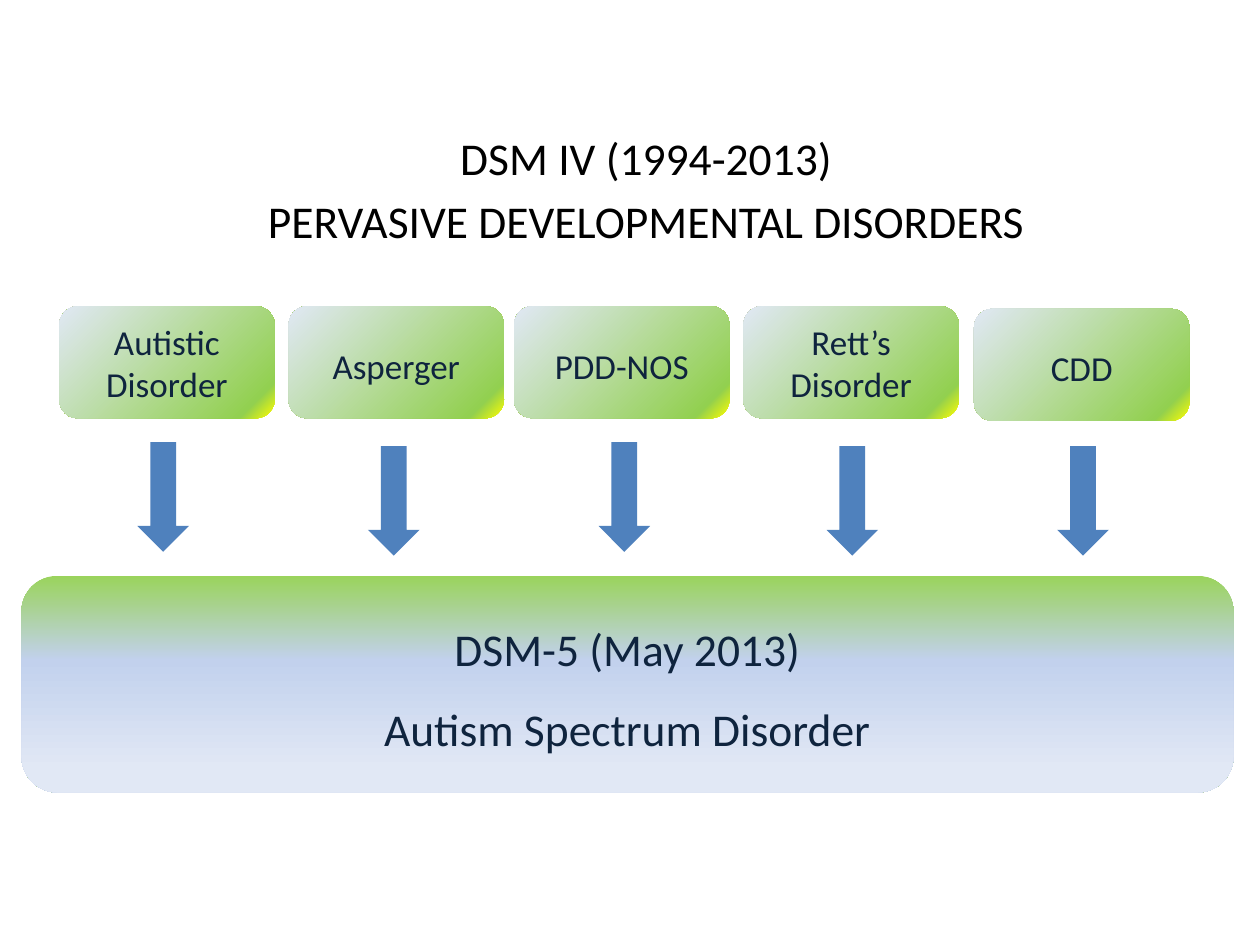
from lxml import etree
from pptx import Presentation
from pptx.dml.color import RGBColor
from pptx.enum.shapes import MSO_SHAPE
from pptx.enum.text import MSO_ANCHOR, MSO_AUTO_SIZE, PP_ALIGN
from pptx.oxml.ns import qn
from pptx.util import Inches, Pt

ROUNDED = MSO_SHAPE.ROUNDED_RECTANGLE
DOWN_ARROW = MSO_SHAPE.DOWN_ARROW
CENTER = PP_ALIGN.CENTER
MIDDLE, TOP = MSO_ANCHOR.MIDDLE, MSO_ANCHOR.TOP
NO_AUTOFIT = MSO_AUTO_SIZE.NONE

WHITE = RGBColor(0xFF, 0xFF, 0xFF)
BLACK = RGBColor(0x00, 0x00, 0x00)
NAVY = RGBColor(0x0F, 0x24, 0x3E)
BLUE = RGBColor(0x4F, 0x81, 0xBD)
YELLOW = RGBColor(0xFF, 0xFF, 0x00)
GREEN = RGBColor(0x92, 0xD0, 0x50)
LIGHT_GREEN = RGBColor(0x9A, 0xD3, 0x5C)
SOFT_BLUE = RGBColor(0xC2, 0xD1, 0xED)
PALE_BLUE = RGBColor(0xE1, 0xE8, 0xF5)

DISORDER_GRADIENT = [(0, YELLOW), (11, GREEN), (100, PALE_BLUE)], 225
SPECTRUM_GRADIENT = [(0, LIGHT_GREEN), (39, SOFT_BLUE), (89, PALE_BLUE)], 90

DISORDERS = [
    ("Autistic Disorder", 0.47, 2.43, 1.0, 1.09, 3.51),
    ("Asperger", 2.29, 2.43, 1.15, 2.92, 3.54),
    ("PDD-NOS", 4.08, 2.43, 1.15, 4.75, 3.51),
    ("Rett’s Disorder", 5.9, 2.43, 1.0, 6.56, 3.54),
    ("CDD", 7.73, 2.45, 1.15, 8.39, 3.54),
]


class DiagramSlide:
    """Holds the text style and the current slide, and adds its elements."""

    font_name = "Calibri"

    def __init__(self, slide):
        self.slide = slide

    def label(self, shape, lines, size, color, spacing, after, anchor):
        frame = shape.text_frame
        frame_format = {"word_wrap": True, "auto_size": NO_AUTOFIT, "vertical_anchor": anchor}
        for name, value in frame_format.items():
            setattr(frame, name, value)
        frame.text = "\n".join(lines)
        paragraph_format = {
            "alignment": CENTER,
            "line_spacing": spacing,
            "space_before": Pt(0),
            "space_after": Pt(after),
        }
        for paragraph in frame.paragraphs:
            for name, value in paragraph_format.items():
                setattr(paragraph, name, value)
            for run in paragraph.runs:
                for name, value in {"name": self.font_name, "size": Pt(size)}.items():
                    setattr(run.font, name, value)
                run.font.color.rgb = color

    def title(self, lines, left, top, width, height):
        heading = self.slide.shapes.title
        bounds = {"left": left, "top": top, "width": width, "height": height}
        for name, value in bounds.items():
            setattr(heading, name, Inches(value))
        heading.fill.solid()
        heading.fill.fore_color.rgb = WHITE
        self.label(heading, lines, 26, BLACK, 1.15, 0, TOP)

    def shape(self, kind, left, top, width, height):
        shape = self.slide.shapes.add_shape(
            kind, Inches(left), Inches(top), Inches(width), Inches(height)
        )
        shape.shadow.inherit = False
        shape.line.fill.background()
        return shape

    def box(self, lines, bounds, gradient, size, spacing):
        box = self.shape(ROUNDED, *bounds)
        stops, angle = gradient
        box.fill.gradient()
        gradient_fill = box._element.spPr.find(qn("a:gradFill"))
        stop_list = gradient_fill.find(qn("a:gsLst"))
        for default_stop in list(stop_list):
            stop_list.remove(default_stop)
        for position, color in stops:
            stop = etree.SubElement(stop_list, qn("a:gs"), pos=str(position * 1000))
            etree.SubElement(stop, qn("a:srgbClr"), val=str(color))
        gradient_fill.find(qn("a:lin")).set("ang", str(angle * 60000))
        self.label(box, lines, size, NAVY, spacing, 10, MIDDLE)

    def arrow(self, left, top):
        arrow = self.shape(DOWN_ARROW, left, top, 0.41, 0.87)
        arrow.fill.solid()
        arrow.fill.fore_color.rgb = BLUE


def main():
    deck = Presentation()
    deck.slide_width, deck.slide_height = Inches(10), Inches(7.5)
    diagram = DiagramSlide(deck.slides.add_slide(deck.slide_layouts[5]))
    diagram.title(
        ["DSM IV (1994-2013)", "PERVASIVE DEVELOPMENTAL DISORDERS"], 1.62, 0.92, 7.02, 1.19
    )
    diagram.box(
        ["DSM-5 (May 2013)", "Autism Spectrum Disorder"],
        (0.17, 4.57, 9.62, 1.72), SPECTRUM_GRADIENT, 26, 1.15,
    )
    for disorder, left, top, spacing, arrow_left, arrow_top in DISORDERS:
        diagram.box([disorder], (left, top, 1.71, 0.89), DISORDER_GRADIENT, 20, spacing)
        diagram.arrow(arrow_left, arrow_top)
    deck.save("out.pptx")


if __name__ == "__main__":
    main()
